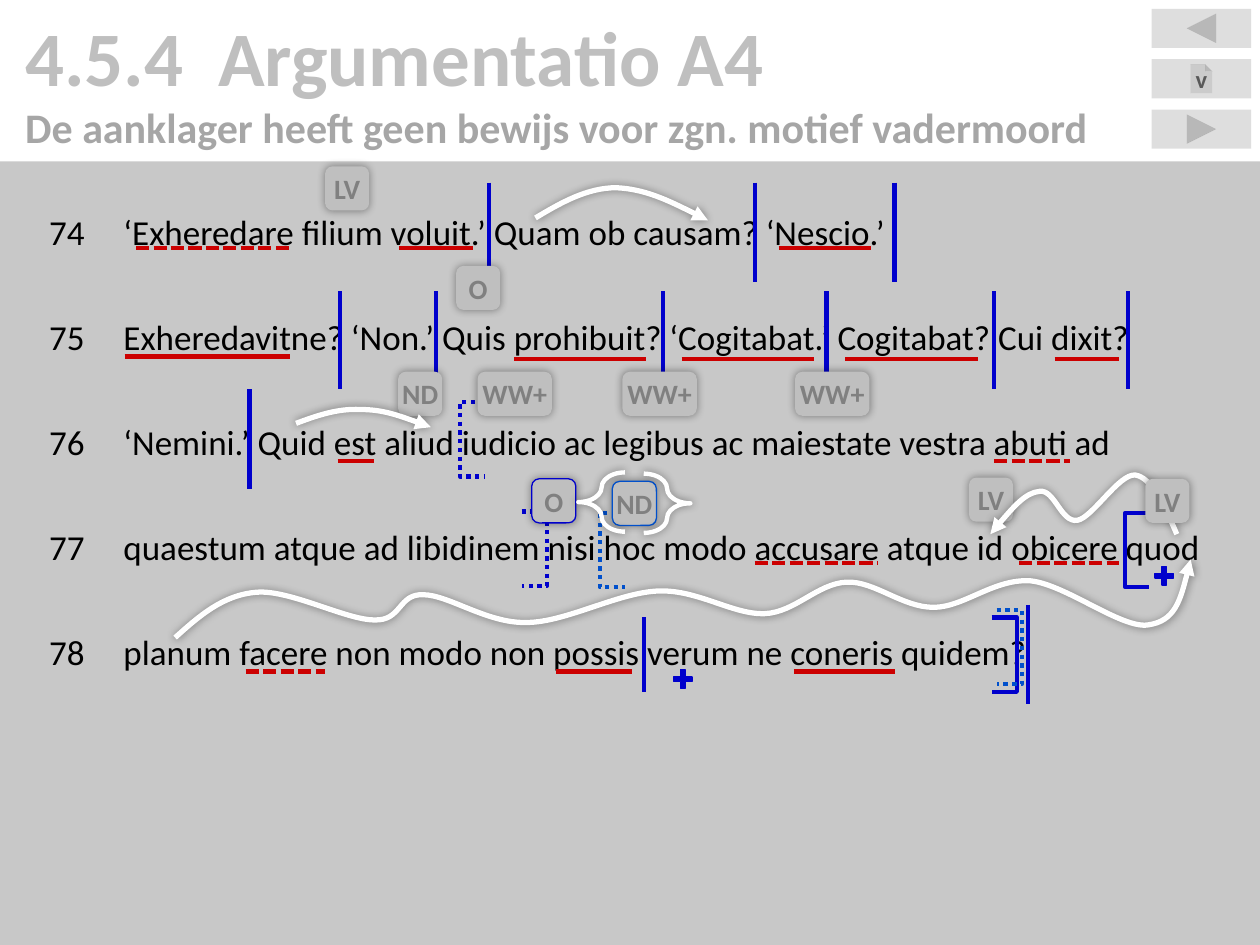
from lxml.etree import SubElement
from pptx import Presentation
from pptx.dml.color import RGBColor
from pptx.enum.dml import MSO_LINE as Dash
from pptx.enum.shapes import MSO_CONNECTOR as Link, MSO_SHAPE as Kind
from pptx.enum.text import MSO_ANCHOR as Anchor, PP_ALIGN as Align
from pptx.oxml.ns import qn
from pptx.util import Pt

PX = 9144  # EMU per px, 100 px to the inch

THEME = {
    "font": "Calibri",
    "title": "BFBFBF", "subtitle": "A6A6A6", "button": "BFBFBF", "button_text": "595959",
    "panel": "BFBFBF", "ink": "000000", "badge": "BFBFBF", "badge_text": "808080",
    "clause": "0000CC", "phrase": "0050CC", "verb": "CC0000", "arc": "FFFFFF",
    "title_size": 44, "subtitle_size": 24, "button_size": 14, "verse_size": 20,
    "badge_size": 16, "stroke": 2.5, "arc_stroke": 3, "outline": 0.75,
}

# Content
HEADINGS = [("4.5.4  Argumentatio A4", "title"),
            ("De aanklager heeft geen bewijs voor zgn. motief vadermoord", "subtitle")]
BUTTONS = [(Kind.ACTION_BUTTON_BACK_OR_PREVIOUS, ""),
           (Kind.ACTION_BUTTON_DOCUMENT, "v"),
           (Kind.ACTION_BUTTON_FORWARD_OR_NEXT, "")]
VERSES = [
    (74, "‘Exheredare filium voluit.’ Quam ob causam? ‘Nescio.’"),
    (75, "Exheredavitne? ‘Non.’ Quis prohibuit? ‘Cogitabat.’ Cogitabat? Cui dixit?"),
    (76, "‘Nemini.’ Quid est aliud iudicio ac legibus ac maiestate vestra abuti ad"),
    (77, "quaestum atque ad libidinem nisi hoc modo accusare atque id obicere quod"),
    (78, "planum facere non modo non possis verum ne coneris quidem?"),
]

# Clause borders: top, height, x of each
BORDERS = [(145, 79, [388, 599, 710]), (231, 78, [270, 346, 526, 656, 789, 895]),
           (309, 79, [198]), (480, 79, [816]), (490, 59, [511])]
# Underlined verbs: y, finite (solid) spans, infinitive (dashed) spans
UNDERLINES = [(197, [(317, 375), (618, 691)], [(108, 230)]),
              (283, [(99, 230)], []),
              (285, [(408, 513), (541, 646), (671, 776), (837, 888)], []),
              (366, [(268, 297)], [(789, 849)]),
              (447, [], [(599, 697), (809, 888)]),
              (533, [(441, 502), (630, 710)], [(195, 258)])]
# Brackets: x of open ends, x of spine, top, colour, dash
BRACKET_HEIGHT = 59
BRACKETS = [(912, 893, 407, "clause", None), (787, 807, 490, "clause", None),
            (384, 365, 319, "clause", Dash.ROUND_DOT),
            (414, 434, 406, "clause", Dash.ROUND_DOT),
            (496, 476, 407, "phrase", Dash.ROUND_DOT),
            (791, 811, 484, "phrase", Dash.ROUND_DOT)]
PLUSES = [(914, 447), (532, 529)]
# Badges: label, left, top, outline
BADGE = 35
BADGE_WIDTHS = {"WW+": 59}
BADGES_BELOW = [("LV", 258, 132, None), ("O", 362, 211, None), ("ND", 316, 295, None),
                ("O", 422, 380, "clause"), ("WW+", 379, 295, None),
                ("WW+", 494, 295, None), ("WW+", 631, 295, None), ("LV", 769, 379, None)]
BADGES_ABOVE = [("LV", 909, 380, None), ("ND", 486, 382, "phrase")]
# Arcs: start point, then two control points and an end point per curve
ARCS = [
    [(425, 173), (445, 161), (466, 149), (489, 149), (512, 150), (537, 162), (562, 175)],
    [(235, 336), (251, 330), (268, 324), (286, 325), (304, 325), (323, 332), (342, 339)],
    [(934, 424), (924, 401), (914, 379), (901, 377), (888, 376), (867, 411), (855, 413),
     (842, 415), (837, 388), (825, 390), (814, 391), (800, 407), (786, 424)],
    [(139, 506), (158, 489), (177, 472), (204, 470), (230, 468), (275, 492), (297, 492),
     (319, 493), (316, 471), (336, 472), (356, 472), (387, 495), (418, 494),
     (449, 494), (491, 470), (523, 469), (554, 468), (582, 488), (607, 487),
     (631, 486), (649, 463), (672, 462), (694, 461), (716, 482), (741, 482),
     (765, 482), (789, 459), (818, 461), (846, 464), (890, 499), (911, 496),
     (933, 493), (939, 469), (945, 444)],
]
BRACES = [(459, 375, False), (511, 376, True)]


# Helpers
def assign(target, formats):
    for name, value in formats.items():
        setattr(target, name, value)


def rgb(role):
    return RGBColor.from_string(THEME[role])


def effects(shape, shadow=False):
    props = shape._element.spPr
    if not shadow:
        SubElement(props, qn("a:effectLst"))
        return
    shape.shadow.inherit = False
    glow = SubElement(props.find(qn("a:effectLst")), qn("a:outerShdw"),
                      blurRad=str(Pt(5)), dist="0", dir="0")
    black = SubElement(glow, qn("a:srgbClr"), val="000000")
    SubElement(black, qn("a:alpha"), val="40000")


def paint(shape, role, opacity=None):
    if role is None:
        shape.fill.background()
        return
    shape.fill.solid()
    shape.fill.fore_color.rgb = rgb(role)
    if opacity:
        color = shape._element.spPr.find(qn("a:solidFill"))[0]
        SubElement(color, qn("a:alpha"), val=str(opacity * 1000))


def stroke(shape, role, width=THEME["stroke"], dash=None):
    if role is None:
        shape.line.fill.background()
        return
    shape.line.color.rgb = rgb(role)
    assign(shape.line, {"width": Pt(width), "dash_style": dash})


def add_shape(page, kind, left, top, width, height, fill=None, line=None,
              line_width=THEME["stroke"], opacity=None, shadow=False):
    shape = page.shapes.add_shape(kind, *(PX * n for n in (left, top, width, height)))
    paint(shape, fill, opacity)
    stroke(shape, line, line_width)
    if shadow:
        effects(shape, True)
    else:
        shape.shadow.inherit = False
    return shape


def set_frame(shape, inset, anchor):
    sides = ("margin_left", "margin_top", "margin_right", "margin_bottom")
    assign(shape.text_frame, {**dict.fromkeys(sides, inset * PX),
                              "word_wrap": True, "vertical_anchor": anchor})
    return shape.text_frame


def write(para, text, size, role, bold=True, align=Align.LEFT):
    para.text = text
    para.alignment = align
    assign(para.font, {"name": THEME["font"], "size": Pt(THEME[size]), "bold": bold})
    para.font.color.rgb = rgb(role)


def add_paragraphs(frame, count):
    return [frame.paragraphs[0]] + [frame.add_paragraph() for _ in range(count - 1)]


def add_line(page, start, end, role, dash=None):
    line = page.shapes.add_connector(Link.STRAIGHT, *(PX * n for n in (*start, *end)))
    stroke(line, role, dash=dash)
    effects(line)


def add_outline(page, points):
    builder = page.shapes.build_freeform(*points[0], scale=PX)
    builder.add_line_segments(points[1:], close=False)
    shape = builder.convert_to_shape()
    shape.fill.background()
    return shape


def add_arc(page, points):
    shape = add_outline(page, points)
    stroke(shape, "arc", THEME["arc_stroke"])
    SubElement(shape._element.spPr.find(qn("a:ln")), qn("a:tailEnd"), type="triangle")
    effects(shape, True)
    # Each three points become one Bézier curve
    route = next(shape._element.iter(qn("a:path")))
    steps = route.findall(qn("a:lnTo"))
    for first in range(0, len(steps), 3):
        curve = SubElement(route, qn("a:cubicBezTo"))
        for step in steps[first:first + 3]:
            curve.append(step[0])
            route.remove(step)


def add_badges(page, badges):
    for label, left, top, outline in badges:
        box = add_shape(page, Kind.ROUNDED_RECTANGLE, left, top, BADGE_WIDTHS.get(label, BADGE),
                        BADGE, "badge", outline, THEME["outline"], shadow=True)
        frame = set_frame(box, 0, Anchor.MIDDLE)
        write(frame.paragraphs[0], label, "badge_size", "badge_text", align=Align.CENTER)


def main():
    deck = Presentation()
    assign(deck, {"slide_width": 1000 * PX, "slide_height": 750 * PX})
    page = deck.slides.add_slide(deck.slide_layouts[6])

    # Heading
    box = page.shapes.add_textbox(0, 0, 1000 * PX, 128 * PX)
    frame = set_frame(box, 20, Anchor.MIDDLE)
    for para, (text, role) in zip(add_paragraphs(frame, len(HEADINGS)), HEADINGS):
        write(para, text, role + "_size", role)

    # Navigation buttons
    for row, (kind, label) in enumerate(BUTTONS):
        button = add_shape(page, kind, 914, 7 + 40 * row, 79, 31, "button", opacity=50)
        if label:
            frame = set_frame(button, 0, Anchor.MIDDLE)
            write(frame.paragraphs[0], label, "button_size", "button_text", align=Align.CENTER)

    # Verses
    panel = add_shape(page, Kind.RECTANGLE, 0, 128, 1000, 622, "panel", opacity=85)
    frame = set_frame(panel, 39, Anchor.TOP)
    for para, (number, verse) in zip(add_paragraphs(frame, len(VERSES)), VERSES):
        para.space_after = Pt(36)
        tabs = SubElement(para._p.get_or_add_pPr(), qn("a:tabLst"))
        SubElement(tabs, qn("a:tab"), pos=str(59 * PX), algn="l")
        write(para, f"{number}\t{verse}", "verse_size", "ink", bold=False)

    # Clause borders and underlines
    for top, height, places in BORDERS:
        for x in places:
            add_line(page, (x, top), (x, top + height), "clause")
    for y, finite, infinitive in UNDERLINES:
        for spans, dash in ((finite, None), (infinitive, Dash.SQUARE_DOT)):
            for left, right in spans:
                add_line(page, (left, y), (right, y), "verb", dash)

    # Brackets and plus signs
    for end, spine, top, role, dash in BRACKETS:
        bottom = top + BRACKET_HEIGHT
        bracket = add_outline(page, [(end, top), (spine, top), (spine, bottom), (end, bottom)])
        stroke(bracket, role, dash=dash)
        bracket.shadow.inherit = False
    for left, top in PLUSES:
        plus = add_shape(page, Kind.MATH_PLUS, left, top, 20, 20, "clause", "clause", 0)
        plus.adjustments[0] = 0.17

    # Badges, arcs and braces
    add_badges(page, BADGES_BELOW)
    for points in ARCS:
        add_arc(page, points)
    add_badges(page, BADGES_ABOVE)
    for left, top, mirrored in BRACES:
        brace = add_shape(page, Kind.LEFT_BRACE, left, top, 37, 47, line="arc", shadow=True)
        brace.adjustments[0] = 0.35
        if mirrored:
            brace._element.spPr.find(qn("a:xfrm")).set("flipH", "1")

    deck.save("out.pptx")


if __name__ == "__main__":
    main()
